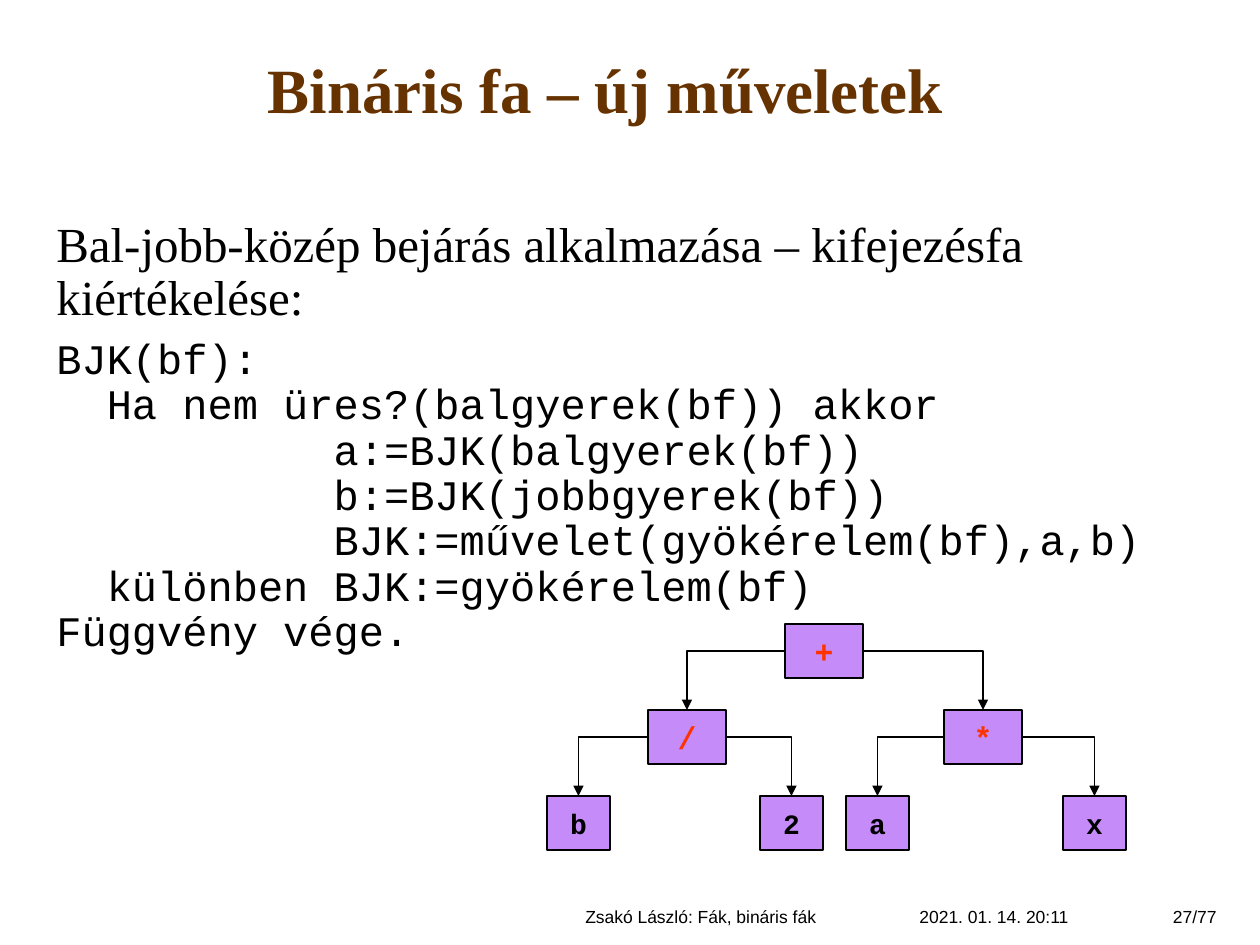
"""Build a slide on evaluating an expression tree by post-order traversal."""
from dataclasses import dataclass

from lxml import etree
from pptx import Presentation
from pptx.dml.color import RGBColor
from pptx.enum.shapes import MSO_CONNECTOR, MSO_SHAPE
from pptx.enum.text import MSO_ANCHOR, PP_ALIGN
from pptx.oxml.ns import qn
from pptx.util import Emu, Pt

ELBOW, RECT = MSO_CONNECTOR.ELBOW, MSO_SHAPE.RECTANGLE
LEFT, CENTER, RIGHT = PP_ALIGN.LEFT, PP_ALIGN.CENTER, PP_ALIGN.RIGHT
TOP, MIDDLE = MSO_ANCHOR.TOP, MSO_ANCHOR.MIDDLE

BLACK = RGBColor(0x00, 0x00, 0x00)
BROWN = RGBColor(0x66, 0x33, 0x00)
VIOLET = RGBColor(0xC5, 0x8B, 0xF9)
ORANGE = RGBColor(0xFF, 0x33, 0x00)

SERIF, MONO, SANS = "Times New Roman", "Courier New", "Arial"
PX = 914400 / 126
NODE_H, OPERATOR_W, OPERAND_W = 54, 78, 63
LEVEL_TOP, LEVEL_STEP = 624, 86
LEFT_SITE, RIGHT_SITE, TOP_SITE = 1, 3, 0

CODE = [
    "BJK(bf):",
    "  Ha nem üres?(balgyerek(bf)) akkor",
    "           a:=BJK(balgyerek(bf))",
    "           b:=BJK(jobbgyerek(bf))",
    "           BJK:=művelet(gyökérelem(bf),a,b)",
    "  különben BJK:=gyökérelem(bf)",
    "Függvény vége.",
]


@dataclass(frozen=True)
class Node:
    text: str
    center: int
    children: tuple["Node", ...] = ()


@dataclass(frozen=True)
class Label:
    text: str
    left: int
    width: int
    align: PP_ALIGN


TREE = Node("+", 824, (
    Node("/", 687, (Node("b", 578), Node("2", 791))),
    Node("*", 983, (Node("a", 877), Node("x", 1094))),
))
FOOTER = [
    Label("2021. 01. 14. 20:11", 907, 208, LEFT),
    Label("Zsakó László: Fák, bináris fák", 501, 399, CENTER),
    Label("27/77", 1155, 74, RIGHT),
]


def px(n: int) -> Emu:
    """Turn pixels into EMU."""
    return Emu(round(n * PX))


def write(p, text: str, *, size: int, font: str, color=BLACK, bold=False,
          align=LEFT, spacing=1.0, before=0) -> None:
    """Put formatted text into a paragraph."""
    p.alignment, p.line_spacing, p.space_before = align, spacing, Pt(before)
    r = p.add_run()
    r.text = text
    r.font.size, r.font.name, r.font.bold = Pt(size), font, bold
    r.font.color.rgb = color


def add_box(s, left: int, top: int, width: int, height: int):
    """Add a wrapping text box and return its text frame."""
    tf = s.shapes.add_textbox(px(left), px(top), px(width), px(height)).text_frame
    tf.word_wrap, tf.vertical_anchor = True, TOP
    return tf


def add_edge(s, parent, child, site: int) -> None:
    """Join a parent's side to the top of its child with a bent arrow."""
    edge = s.shapes.add_connector(ELBOW, 0, 0, 0, 0)
    edge.begin_connect(parent, site)
    edge.end_connect(child, TOP_SITE)
    edge.line.color.rgb, edge.line.width = BLACK, Pt(0.75)
    sp_pr = edge._element.spPr
    sp_pr.find(qn("a:prstGeom")).set("prst", "bentConnector2")
    etree.SubElement(sp_pr.find(qn("a:ln")), qn("a:tailEnd"), type="triangle")
    etree.SubElement(sp_pr, qn("a:effectLst"))


def add_tree(s, node: Node, level: int = 0):
    """Draw a node with its subtrees and return the node's shape."""
    width = OPERATOR_W if node.children else OPERAND_W
    sp = s.shapes.add_shape(RECT, px(node.center - width // 2),
                            px(LEVEL_TOP + level * LEVEL_STEP), px(width), px(NODE_H))
    sp.shadow.inherit = False
    sp.fill.solid()
    sp.fill.fore_color.rgb = VIOLET
    sp.line.color.rgb, sp.line.width = BLACK, Pt(0.75)
    tf = sp.text_frame
    tf.word_wrap, tf.vertical_anchor = False, MIDDLE
    write(tf.paragraphs[0], node.text, size=18 if node.children else 16, font=MONO,
          color=ORANGE if node.children else BLACK, bold=True, align=CENTER)
    for child, site in zip(node.children, (LEFT_SITE, RIGHT_SITE)):
        add_edge(s, sp, add_tree(s, child, level + 1), site)
    return sp


def main() -> None:
    """Build and save the slide."""
    prs = Presentation()
    prs.slide_width, prs.slide_height = px(1260), px(945)
    s = prs.slides.add_slide(prs.slide_layouts[5])

    title = s.shapes.title
    title.left, title.top, title.width, title.height = map(px, (174, 11, 863, 154))
    title.text_frame.vertical_anchor = MIDDLE
    write(title.text_frame.paragraphs[0], "Bináris fa – új műveletek", size=36,
          font=SERIF, color=BROWN, bold=True, align=CENTER)

    tf = add_box(s, 44, 214, 1186, 402)
    write(tf.paragraphs[0],
          "Bal-jobb-közép bejárás alkalmazása – kifejezésfa kiértékelése:",
          size=28, font=SERIF, spacing=0.9)
    for i, line in enumerate(CODE):
        write(tf.add_paragraph(), line, size=24, font=MONO, spacing=0.9,
              before=0 if i else 7)

    add_tree(s, TREE)
    for label in FOOTER:
        tf = add_box(s, label.left, 900, label.width, 45)
        write(tf.paragraphs[0], label.text, size=10, font=SANS, align=label.align)
    prs.save("out.pptx")


if __name__ == "__main__":
    main()
